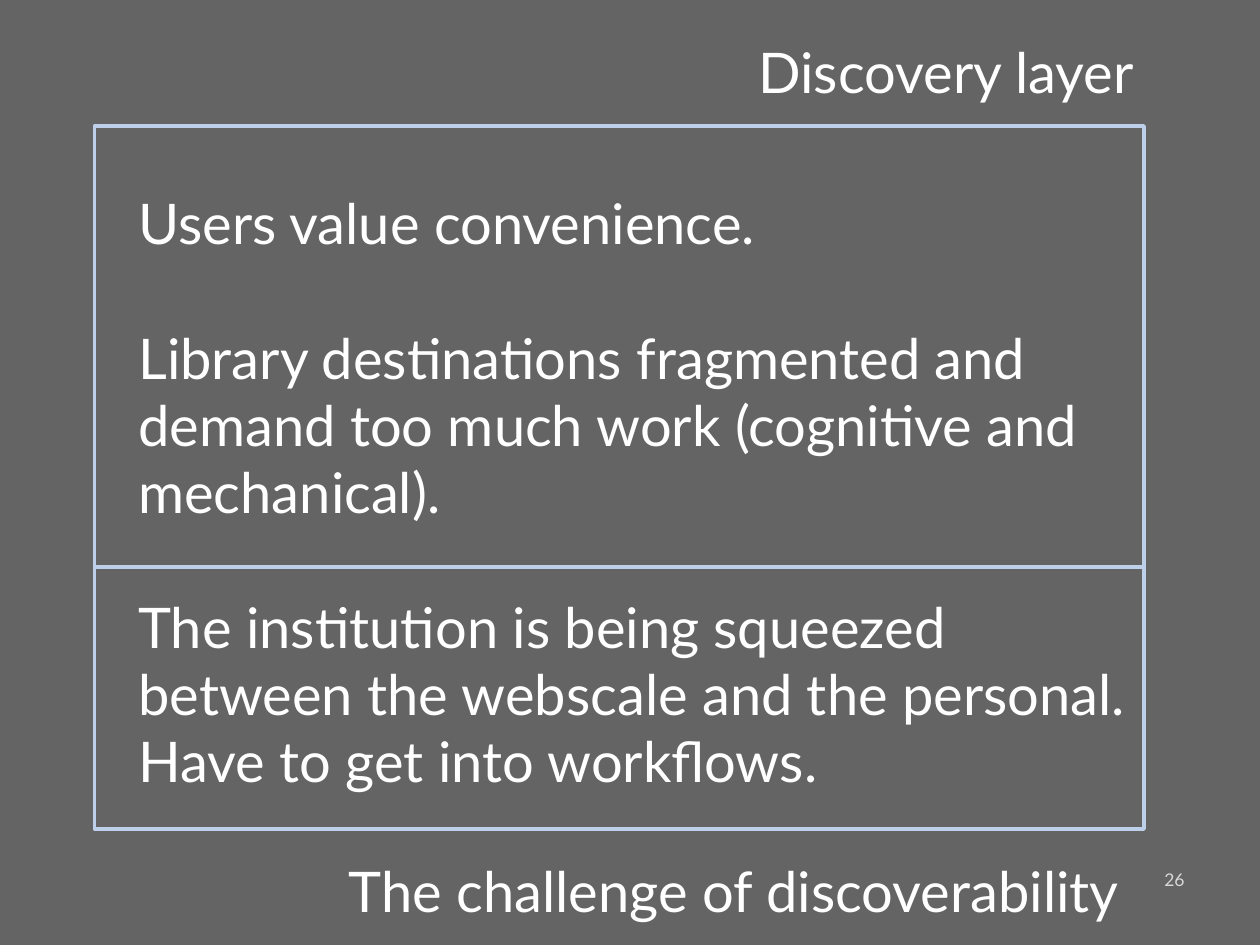
"""Build the slide on the challenge of discoverability."""
from dataclasses import dataclass

import pptx
import pptx.dml.color
import pptx.enum.shapes
import pptx.enum.text
import pptx.slide
import pptx.util
from pptx.util import Inches

ALIGN = pptx.enum.text.PP_ALIGN
ANCHOR = pptx.enum.text.MSO_ANCHOR
RGB = pptx.dml.color.RGBColor


@dataclass(frozen=True)
class Theme:
    font: str = "Lato"
    background: RGB = RGB(0x64, 0x64, 0x64)
    text: RGB = RGB(0xFF, 0xFF, 0xFF)
    muted: RGB = RGB(0xD9, 0xD9, 0xD9)
    outline: RGB = RGB(0xBE, 0xCF, 0xEA)
    body_size: float = 32
    number_size: float = 10
    line_height: float = 38.4
    outline_width: float = 2


THEME = Theme()


@dataclass(frozen=True)
class Area:
    left: float
    top: float
    width: float
    height: float

    def lengths(self) -> tuple[pptx.util.Length, ...]:
        return tuple(Inches(value) for value in (self.left, self.top, self.width, self.height))


@dataclass(frozen=True)
class Label:
    area: Area
    paragraphs: tuple[str, ...]
    size: float = THEME.body_size
    color: RGB = THEME.text
    align: ALIGN = ALIGN.LEFT
    anchor: ANCHOR = ANCHOR.TOP
    bottom_inset: float = 0.05


FRAMES = (Area(0.75, 1, 8.33, 3.5), Area(0.75, 4.5, 8.33, 2.08))

LABELS = (
    Label(
        Area(1, 2.58, 8.17, 3.17),
        (
            "Users value convenience.",
            "Library destinations fragmented and demand too much work (cognitive and mechanical).",
            "The institution is being squeezed between the webscale and the personal. "
            "Have to get into workflows.",
        ),
        anchor=ANCHOR.MIDDLE,
        bottom_inset=0.58,
    ),
    Label(
        Area(7.17, 6.78, 2.33, 0.4),
        ("26",),
        size=THEME.number_size,
        color=THEME.muted,
        align=ALIGN.RIGHT,
        anchor=ANCHOR.MIDDLE,
    ),
    Label(Area(5.92, 0.25, 3.5, 0.64), ("Discovery layer",)),
    Label(Area(2.67, 6.75, 7.58, 0.64), ("The challenge of discoverability",)),
)


def draw_frame(page: pptx.slide.Slide, area: Area) -> None:
    frame = page.shapes.add_shape(pptx.enum.shapes.MSO_SHAPE.RECTANGLE, *area.lengths())
    frame.shadow.inherit = False
    frame.fill.background()
    frame.line.color.rgb = THEME.outline
    frame.line.width = pptx.util.Pt(THEME.outline_width)


def draw_label(page: pptx.slide.Slide, label: Label) -> None:
    box = page.shapes.add_textbox(*label.area.lengths())
    text_frame = box.text_frame
    text_frame.word_wrap = True
    text_frame.vertical_anchor = label.anchor
    text_frame.margin_bottom = Inches(label.bottom_inset)
    text_frame.text = "\n".join(label.paragraphs)
    for index, para in enumerate(text_frame.paragraphs):
        para.alignment = label.align
        if index:
            para.space_before = pptx.util.Pt(THEME.line_height)
        for span in para.runs:
            span.font.name = THEME.font
            span.font.size = pptx.util.Pt(label.size)
            span.font.color.rgb = label.color


def main() -> None:
    deck = pptx.Presentation()
    deck.slide_width, deck.slide_height = Inches(10), Inches(7.5)
    page = deck.slides.add_slide(deck.slide_layouts[6])
    page.background.fill.solid()
    page.background.fill.fore_color.rgb = THEME.background
    for area in FRAMES:
        draw_frame(page, area)
    for label in LABELS:
        draw_label(page, label)
    deck.save("out.pptx")


if __name__ == "__main__":
    main()
